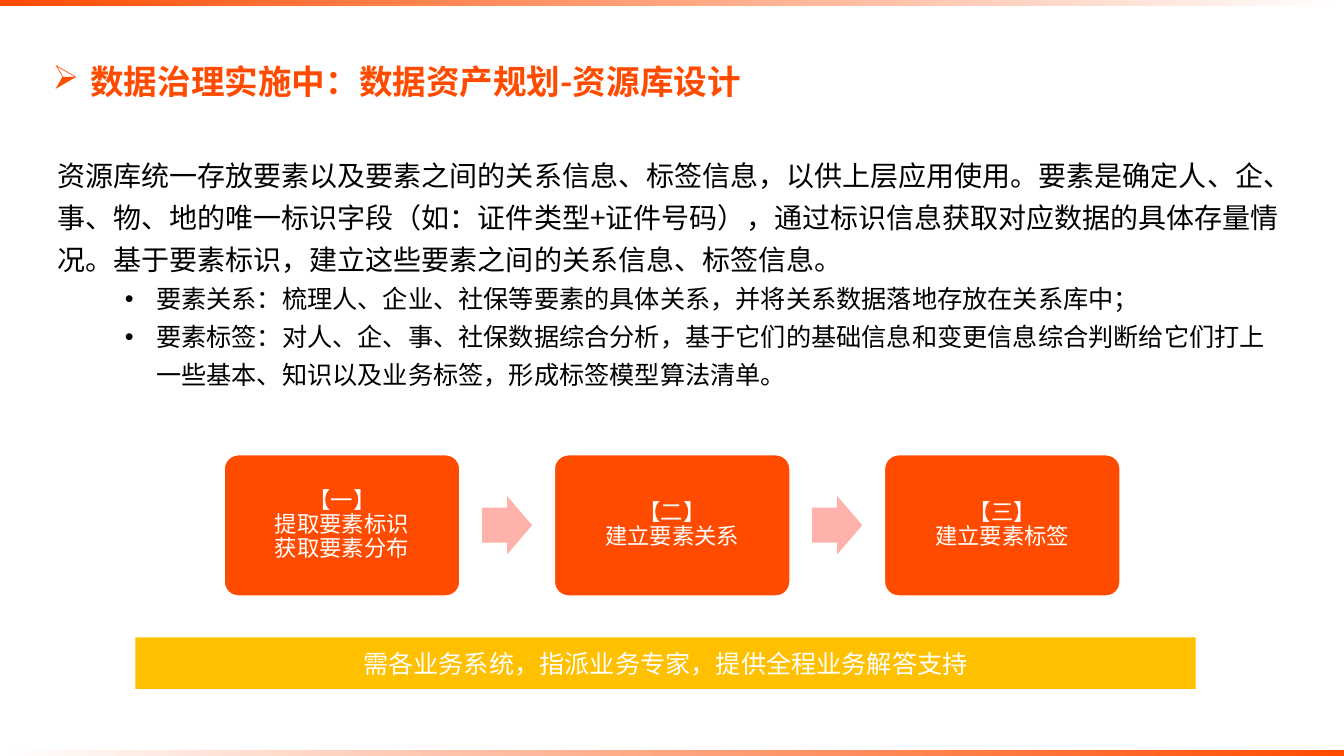
import pptx
import pptx.dml.color
import pptx.enum.shapes
import pptx.enum.text
import pptx.oxml.ns
import pptx.util
from lxml import etree

Cm, Pt = pptx.util.Cm, pptx.util.Pt
SHAPE = pptx.enum.shapes.MSO_SHAPE
ALIGN = pptx.enum.text.PP_ALIGN
ANCHOR = pptx.enum.text.MSO_ANCHOR
qn = pptx.oxml.ns.qn


def rgb(value):
    return pptx.dml.color.RGBColor.from_string(value)


class Deck:
    FONT = "Noto Sans CJK SC"
    ORANGE, PINK, GOLD = "FF4B00", "FFB2AB", "FFC000"
    WHITE, BLACK = "FFFFFF", "000000"

    def __init__(self):
        self.prs = pptx.Presentation()
        self.prs.slide_width, self.prs.slide_height = Cm(33.87), Cm(19.05)
        self.s = self.prs.slides.add_slide(self.prs.slide_layouts[1])

    def style(self, p, size, color, align=ALIGN.LEFT, bold=False, spacing=1.0):
        p.alignment, p.line_spacing = align, spacing
        p.space_before = p.space_after = Pt(0)
        font = p.font
        font.name, font.size, font.bold = self.FONT, Pt(size), bold
        font.color.rgb = rgb(color)
        # East Asian typeface follows the Latin one
        latin = p._p.pPr.find(qn("a:defRPr")).find(qn("a:latin"))
        ea = etree.Element(qn("a:ea"), typeface=self.FONT)
        latin.addnext(ea)

    def bullet(self, p, char=None, left=0, hanging=0):
        pPr = p._p.get_or_add_pPr()
        pPr.set("marL", str(Cm(left)))
        pPr.set("indent", str(-Cm(hanging)))
        bu = etree.Element(qn("a:buChar" if char else "a:buNone"))
        if char:
            bu.set("char", char)
        pPr.find(qn("a:defRPr")).addprevious(bu)

    def place(self, sp, x, y, w, h, anchor):
        sp.left, sp.top, sp.width, sp.height = Cm(x), Cm(y), Cm(w), Cm(h)
        tf = sp.text_frame
        tf.word_wrap, tf.vertical_anchor = True, anchor
        tf.auto_size = pptx.enum.text.MSO_AUTO_SIZE.NONE
        return tf

    def title(self, text, x, y, w, h):
        tf = self.place(self.s.shapes.title, x, y, w, h, ANCHOR.MIDDLE)
        tf.text = text
        p = tf.paragraphs[0]
        self.style(p, 24, self.ORANGE, bold=True)
        self.bullet(p, "➢", 0.95, 0.95)

    def body(self, intro, items, x, y, w, h):
        tf = self.place(self.s.placeholders[1], x, y, w, h, ANCHOR.TOP)
        tf.text = "\n".join([intro, *items])
        for i, p in enumerate(tf.paragraphs):
            p.level = min(i, 1)
            self.style(p, 18 if i else 20, self.BLACK, spacing=1.25)
            if i:
                self.bullet(p, "•", 2.49, 0.79)
            else:
                self.bullet(p)

    def shape(self, kind, x, y, w, h, fill, text="", size=18, spacing=1.0, adj=()):
        sp = self.s.shapes.add_shape(kind, Cm(x), Cm(y), Cm(w), Cm(h))
        sp.shadow.inherit = False
        sp.fill.solid()
        sp.fill.fore_color.rgb = rgb(fill)
        sp.line.fill.background()
        for i, value in enumerate(adj):
            sp.adjustments[i] = value
        if text:
            tf = sp.text_frame
            tf.word_wrap, tf.vertical_anchor = True, ANCHOR.MIDDLE
            p = tf.paragraphs[0]
            p.text = text
            self.style(p, size, self.WHITE, ALIGN.CENTER, spacing=spacing)
        return sp

    def edge_bar(self, y, angle):
        sp = self.shape(SHAPE.RECTANGLE, 0, y, 33.87, 0.15, self.ORANGE)
        sp.fill.gradient()
        sp.fill.gradient_angle = angle
        for stop, color in zip(sp.fill.gradient_stops, (self.ORANGE, self.WHITE)):
            stop.color.rgb = rgb(color)


def main():
    d = Deck()

    # Edge bars
    d.edge_bar(0, 0)
    d.edge_bar(18.91, 180)

    # Title and explanation
    d.title("数据治理实施中：数据资产规划-资源库设计", 1.07, 1.02, 32.05, 2.06)
    d.body(
        "资源库统一存放要素以及要素之间的关系信息、标签信息，以供上层应用使用。"
        "要素是确定人、企、事、物、地的唯一标识字段（如：证件类型+证件号码），"
        "通过标识信息获取对应数据的具体存量情况。"
        "基于要素标识，建立这些要素之间的关系信息、标签信息。",
        ["要素关系：梳理人、企业、社保等要素的具体关系，并将关系数据落地存放在关系库中；",
         "要素标签：对人、企、事、社保数据综合分析，基于它们的基础信息和变更信息"
         "综合判断给它们打上一些基本、知识以及业务标签，形成标签模型算法清单。"],
        1.19, 3.66, 31.5, 7.52)

    # Three steps joined by arrows
    steps = ["【一】\v提取要素标识\v获取要素分布", "【二】\v建立要素关系", "【三】\v建立要素标签"]
    left, pitch = 5.65, 8.32
    for i, step in enumerate(steps):
        x = left + i * pitch
        if i:
            d.shape(SHAPE.RIGHT_ARROW, x - 1.82, 12.5, 1.26, 1.47, d.PINK, adj=(0.6, 0.5))
        box = d.shape(SHAPE.ROUNDED_RECTANGLE, x, 11.46, 5.94, 3.56, d.ORANGE,
                      step, 16, 0.9, adj=(0.1,))
        box.line.color.rgb = rgb(d.WHITE)
        box.line.width = Pt(1)

    # Support banner
    d.shape(SHAPE.RECTANGLE, 3.41, 16.06, 26.72, 1.3, d.GOLD,
            "需各业务系统，指派业务专家，提供全程业务解答支持")

    d.prs.save("out.pptx")


if __name__ == "__main__":
    main()
